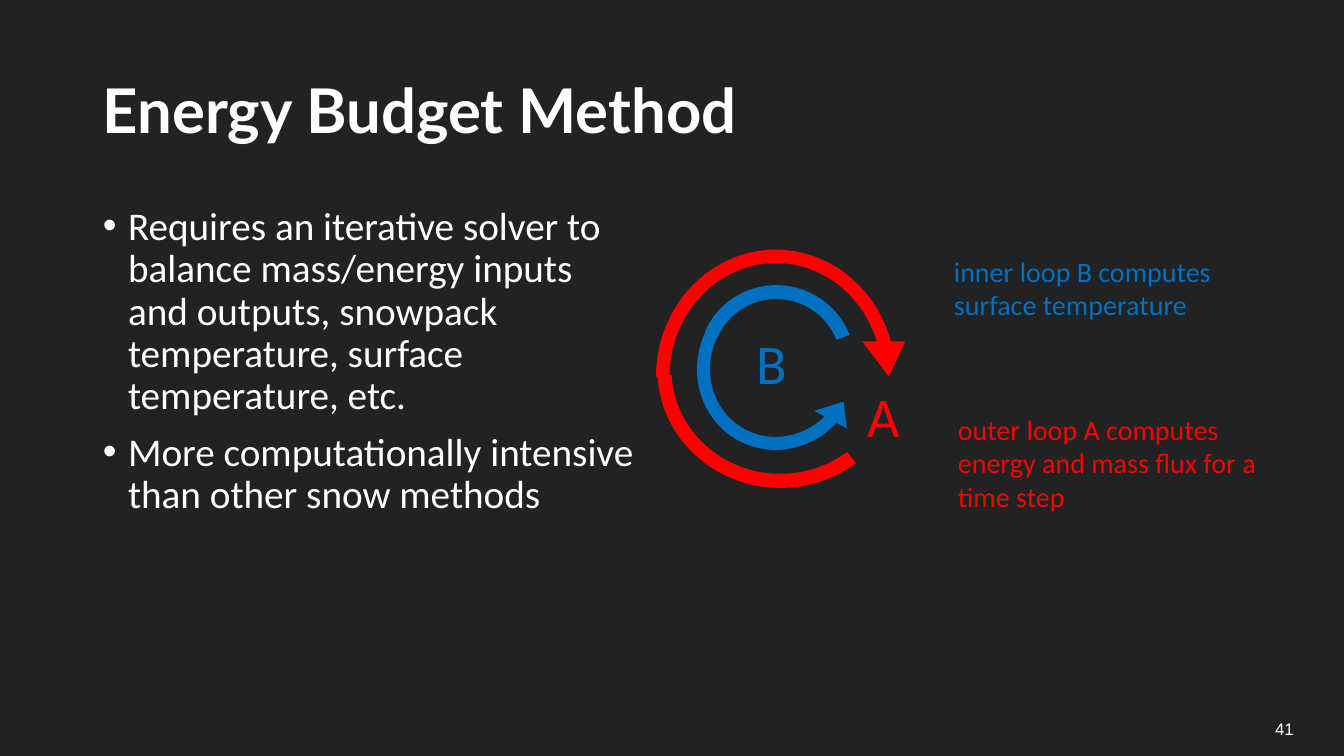
from pptx import Presentation
from pptx import util as u
from pptx.dml.color import RGBColor
from pptx.enum import shapes, text

BACKGROUND = RGBColor(0x20, 0x22, 0x23)
WHITE = RGBColor(0xFF, 0xFF, 0xFF)
BLUE = RGBColor(0x00, 0x70, 0xC0)
RED = RGBColor(0xFF, 0x00, 0x00)

ARROW = shapes.MSO_SHAPE.CIRCULAR_ARROW
ARC = shapes.MSO_SHAPE.BLOCK_ARC
BULLETS = [
    "Requires an iterative solver to balance mass/energy inputs and outputs, "
    "snowpack temperature, surface temperature, etc.",
    "More computationally intensive than other snow methods",
]


def set_values(target, values):
    for name, value in values.items():
        setattr(target, name, value)


def place(shape, box):
    names = ("left", "top", "width", "height")
    set_values(shape, dict(zip(names, map(u.Inches, box))))


def format_paragraph(paragraph, font, size, color, bold=False, **values):
    set_values(paragraph, values)
    set_values(paragraph.font, {"name": font, "size": u.Pt(size), "bold": bold})
    paragraph.font.color.rgb = color


def add_title(slide, title, box):
    shape = slide.shapes.title
    place(shape, box)
    frame = shape.text_frame
    frame.text = title
    set_values(frame, {"vertical_anchor": text.MSO_ANCHOR.MIDDLE,
                       "auto_size": text.MSO_AUTO_SIZE.NONE})
    format_paragraph(frame.paragraphs[0], "Lato", 44, WHITE, True,
                     alignment=text.PP_ALIGN.LEFT, line_spacing=0.9)


def add_bullets(slide, items, box):
    shape = slide.placeholders[1]
    place(shape, box)
    frame = shape.text_frame
    frame.text = "\n".join(items)
    frame.auto_size = text.MSO_AUTO_SIZE.NONE
    for index, paragraph in enumerate(frame.paragraphs):
        properties = paragraph._p.get_or_add_pPr()
        properties.set("marL", str(u.Inches(0.25)))
        properties.set("indent", str(u.Inches(-0.25)))
        format_paragraph(paragraph, "Calibri", 28, WHITE, line_spacing=0.9,
                         space_before=u.Pt(10 if index else 0))


def add_label(container, wording, box, size, color, font="Calibri",
              inset=(0.14, 0.07), anchor=text.MSO_ANCHOR.TOP,
              alignment=text.PP_ALIGN.LEFT):
    frame = container.add_textbox(*map(u.Inches, box)).text_frame
    frame.text = wording
    side, end = map(u.Inches, inset)
    set_values(frame, {"word_wrap": True, "vertical_anchor": anchor,
                       "margin_left": side, "margin_right": side,
                       "margin_top": end, "margin_bottom": end})
    format_paragraph(frame.paragraphs[0], font, size, color, alignment=alignment)


def add_curve(container, kind, box, color, adjustments, rotation=0, mirrored=False):
    shape = container.add_shape(kind, *map(u.Inches, box))
    for index, value in enumerate(adjustments):
        shape.adjustments[index] = value
    shape.rotation = rotation
    if mirrored:
        shape._element.spPr.xfrm.set("flipH", "1")
    shape.shadow.inherit = False
    shape.fill.solid()
    shape.fill.fore_color.rgb = color
    shape.line.fill.background()


def add_inner_loop(slide):
    loop = slide.shapes.add_group_shape().shapes
    add_curve(loop, ARROW, (6.8, 2.68, 1.84, 1.91), BLUE,
              (0.07, 10.32, 204.55, 108, 0.1), 206.5, True)
    add_curve(loop, ARC, (6.93, 2.83, 1.55, 1.53), BLUE,
              (131.76, 213.73, 0.09), 18.9, True)
    add_label(loop, "inner loop B computes surface temperature",
              (9.32, 2.45, 3.02, 0.81), 20, BLUE)
    add_label(loop, "B", (7.36, 3.19, 0.44, 0.81), 40, BLUE)


def add_outer_loop(slide):
    loop = slide.shapes.add_group_shape().shapes
    add_curve(loop, ARROW, (6.36, 2.33, 2.67, 2.82), RED,
              (0.05, 10.89, 205.03, 108, 0.08))
    add_curve(loop, ARC, (6.52, 2.5, 2.44, 2.34), RED,
              (138.53, 214.44, 0.06), 180)
    add_label(loop, "A", (8.46, 3.71, 0.44, 0.81), 40, RED)
    add_label(loop, "outer loop A computes energy and mass flux for a time step",
              (9.36, 4.02, 3.31, 1.15), 20, RED)


def main():
    presentation = Presentation()
    set_values(presentation, {"slide_width": u.Inches(13.33),
                              "slide_height": u.Inches(7.5)})
    slide = presentation.slides.add_slide(presentation.slide_layouts[1])
    slide.background.fill.solid()
    slide.background.fill.fore_color.rgb = BACKGROUND
    add_title(slide, "Energy Budget Method", (0.92, 0.4, 11.5, 1.45))
    add_bullets(slide, BULLETS, (0.92, 2, 5.49, 4.76))
    add_label(slide.shapes, "41", (12.3, 7.06, 0.88, 0.35), 12, WHITE, "Arial",
              (0.1, 0.05), text.MSO_ANCHOR.MIDDLE, text.PP_ALIGN.CENTER)
    add_inner_loop(slide)
    add_outer_loop(slide)
    presentation.save("out.pptx")


if __name__ == "__main__":
    main()
